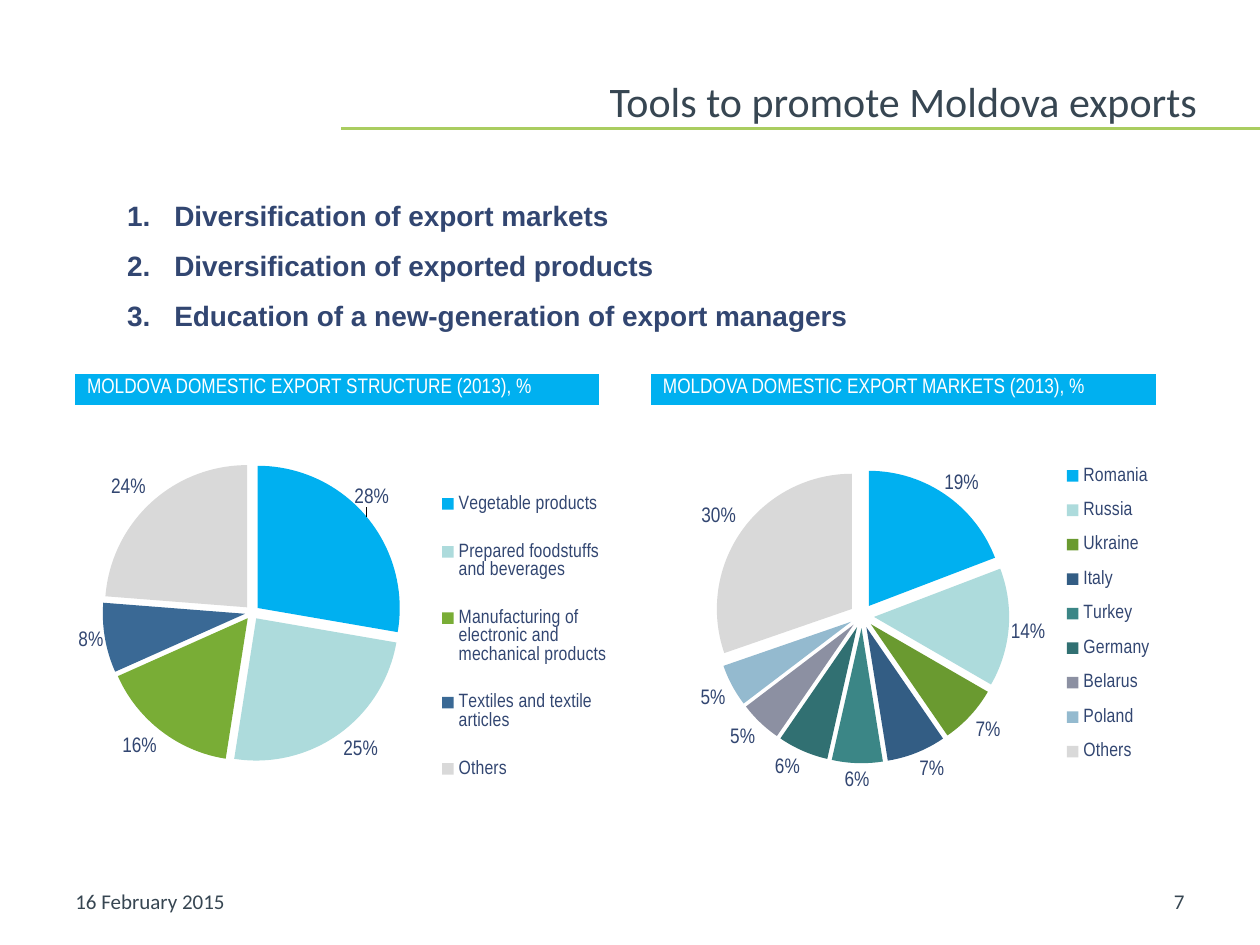
from dataclasses import dataclass

import pptx
import pptx.chart.data
import pptx.dml.color
import pptx.enum.chart
import pptx.enum.shapes
import pptx.enum.text
import pptx.oxml
import pptx.oxml.ns
import pptx.util
from lxml import etree

Cm = pptx.util.Cm
Pt = pptx.util.Pt
RGBColor = pptx.dml.color.RGBColor
Align = pptx.enum.text.PP_ALIGN
Anchor = pptx.enum.text.MSO_ANCHOR
qn = pptx.oxml.ns.qn

SLATE = RGBColor(0x37, 0x46, 0x52)
NAVY = RGBColor(0x32, 0x46, 0x71)
LIME = RGBColor(0xAA, 0xCD, 0x60)
WHITE = RGBColor(0xFF, 0xFF, 0xFF)
SKY = RGBColor(0x00, 0xB0, 0xF0)
PALE_TEAL = RGBColor(0xAD, 0xDB, 0xDC)
GREEN = RGBColor(0x79, 0xAD, 0x36)
BLUE = RGBColor(0x3A, 0x69, 0x95)
DARK_GREEN = RGBColor(0x6A, 0x9A, 0x30)
DARK_BLUE = RGBColor(0x33, 0x5D, 0x84)
TEAL = RGBColor(0x3B, 0x86, 0x86)
DARK_TEAL = RGBColor(0x31, 0x70, 0x72)
MAUVE = RGBColor(0x8C, 0x90, 0xA2)
PALE_BLUE = RGBColor(0x94, 0xBA, 0xCF)
GREY = RGBColor(0xD9, 0xD9, 0xD9)

Box = tuple[float, float, float, float]


@dataclass
class Slice:
    label: str
    share: float
    color: RGBColor
    label_shift: tuple[float, float] | None = None


@dataclass
class Panel:
    heading: str
    heading_left: float
    heading_width: float
    chart_box: Box
    plot_box: Box
    legend_box: Box
    explosion: int
    slices: list[Slice]


HEADING_TOP = 7.52
HEADING_HEIGHT = 0.66
GOALS = [
    "Diversification of export markets",
    "Diversification of exported products",
    "Education of a new-generation of export managers",
]
PANELS = [
    Panel(
        "MOLDOVA DOMESTIC EXPORT STRUCTURE (2013), %", 1.5, 10.59,
        (0.89, 8.33, 11.81, 8.74), (0.1, 0.115, 0.51, 0.69), (0.67, 0.12, 0.3, 0.79), 5,
        [
            Slice("Vegetable products", 0.28, SKY, (-0.03, -0.01)),
            Slice("Prepared foodstuffs and beverages", 0.25, PALE_TEAL),
            Slice("Manufacturing of electronic and mechanical products", 0.16, GREEN),
            Slice("Textiles and textile articles", 0.08, BLUE, (0.01, -0.02)),
            Slice("Others", 0.24, GREY),
        ],
    ),
    Panel(
        "MOLDOVA DOMESTIC EXPORT MARKETS (2013), %", 13.11, 10.21,
        (13.11, 8.33, 10.8, 9.4), (0.12, 0.1, 0.55, 0.67), (0.755, 0.08, 0.2, 0.7), 9,
        [
            Slice("Romania", 0.19, SKY, (-0.01, 0.01)),
            Slice("Russia", 0.14, PALE_TEAL, (-0.01, 0.01)),
            Slice("Ukraine", 0.07, DARK_GREEN),
            Slice("Italy", 0.07, DARK_BLUE),
            Slice("Turkey", 0.06, TEAL),
            Slice("Germany", 0.06, DARK_TEAL),
            Slice("Belarus", 0.05, MAUVE),
            Slice("Poland", 0.05, PALE_BLUE),
            Slice("Others", 0.3, GREY),
        ],
    ),
]


def style_font(font, name: str, size: float, color: RGBColor, bold: bool = False) -> None:
    font.name, font.size, font.bold = name, Pt(size), bold
    font.color.rgb = color


def move(shape, box: Box) -> None:
    shape.left, shape.top, shape.width, shape.height = map(Cm, box)


def manual_layout(**settings):
    """Build a c:layout element from its manual settings, in schema order."""
    layout = pptx.oxml.parse_xml(f"<c:layout {pptx.oxml.ns.nsdecls('c')}/>")
    manual = etree.SubElement(layout, qn("c:manualLayout"))
    for name, value in settings.items():
        etree.SubElement(manual, qn(f"c:{name}")).set("val", str(value))
    return layout


def edge_layout(box: Box, **target):
    left, top, width, height = box
    return manual_layout(**target, xMode="edge", yMode="edge", x=left, y=top, w=width, h=height)


def add_title(slide) -> None:
    title = slide.shapes.title
    move(title, (1.27, 0.53, 22.86, 2.01))
    frame = title.text_frame
    frame.text = "Tools to promote Moldova exports"
    frame.vertical_anchor = Anchor.BOTTOM
    frame.margin_left = frame.margin_top = frame.margin_right = frame.margin_bottom = 0
    paragraph = frame.paragraphs[0]
    paragraph.alignment, paragraph.line_spacing = Align.RIGHT, Pt(28)
    style_font(paragraph.runs[0].font, "Calibri", 24, SLATE)

    rule = slide.shapes.add_connector(
        pptx.enum.shapes.MSO_CONNECTOR.STRAIGHT, Cm(6.88), Cm(2.59), Cm(25.4), Cm(2.59))
    rule.line.color.rgb, rule.line.width = LIME, Pt(2)
    etree.SubElement(rule._element.spPr, qn("a:effectLst"))


def add_goals(slide) -> None:
    body = slide.placeholders[1]
    move(body, (2.31, 3.53, 18.8, 3.33))
    frame = body.text_frame
    frame.text = "\n".join(GOALS)
    frame.auto_size = pptx.enum.text.MSO_AUTO_SIZE.NONE
    for paragraph in frame.paragraphs:
        paragraph.line_spacing, paragraph.space_before = 1.5, Pt(0)
        properties = paragraph._p.get_or_add_pPr()
        properties.set("marL", str(Cm(0.95)))
        properties.set("indent", str(-Cm(0.95)))
        etree.SubElement(properties, qn("a:buFont")).set("typeface", "+mj-lt")
        etree.SubElement(properties, qn("a:buAutoNum")).set("type", "arabicPeriod")
        style_font(paragraph.runs[0].font, "Arial", 16, NAVY, bold=True)


def add_footer(slide, text: str, left: float, alignment) -> None:
    box = slide.shapes.add_textbox(Cm(left), Cm(17.65), Cm(5.92), Cm(1.02))
    frame = box.text_frame
    frame.word_wrap, frame.vertical_anchor = True, Anchor.MIDDLE
    frame.text = text
    frame.paragraphs[0].alignment = alignment
    style_font(frame.paragraphs[0].runs[0].font, "Calibri", 12, SLATE)


def add_heading(slide, panel: Panel) -> None:
    table = slide.shapes.add_table(
        1, 1, Cm(panel.heading_left), Cm(HEADING_TOP),
        Cm(panel.heading_width), Cm(HEADING_HEIGHT)).table
    table.first_row = table.horz_banding = False
    cell = table.cell(0, 0)
    cell.fill.solid()
    cell.fill.fore_color.rgb = SKY
    cell.margin_top, cell.margin_bottom = Cm(0.05), Cm(0.1)
    cell.vertical_anchor = Anchor.MIDDLE
    cell.text = panel.heading
    style_font(cell.text_frame.paragraphs[0].runs[0].font, "Arial Narrow", 12, WHITE)


def add_pie(slide, panel: Panel) -> None:
    data = pptx.chart.data.CategoryChartData(number_format="0%")
    data.categories = [piece.label for piece in panel.slices]
    data.add_series("Series 1", [piece.share for piece in panel.slices])
    chart = slide.shapes.add_chart(
        pptx.enum.chart.XL_CHART_TYPE.PIE, *map(Cm, panel.chart_box), data).chart
    style_font(chart.font, "Calibri", 18, NAVY)
    chart.has_title = False

    plot_area = chart._chartSpace.chart.plotArea
    for layout in plot_area.findall(qn("c:layout")):
        plot_area.remove(layout)
    plot_area.insert(0, edge_layout(panel.plot_box, layoutTarget="inner"))

    chart.has_legend = True
    chart.legend.position = pptx.enum.chart.XL_LEGEND_POSITION.RIGHT
    chart.legend.include_in_layout = False
    style_font(chart.legend.font, "Arial Narrow", 11, NAVY)
    chart.legend._element.find(qn("c:legendPos")).addnext(edge_layout(panel.legend_box))

    plot = chart.plots[0]
    plot.vary_by_categories = True
    series = plot.series[0]
    explosion = etree.Element(qn("c:explosion"), val=str(panel.explosion))
    series._element.find(qn("c:tx")).addnext(explosion)

    outside = pptx.enum.chart.XL_LABEL_POSITION.OUTSIDE_END
    labels = series.data_labels
    labels.show_value, labels.position = True, outside
    labels.number_format, labels.number_format_is_linked = "0%", False
    style_font(labels.font, "Arial Narrow", 12, NAVY)
    for index, piece in enumerate(panel.slices):
        point = series.points[index]
        point.format.fill.solid()
        point.format.fill.fore_color.rgb = piece.color
        if piece.label_shift:
            label = point.data_label
            style_font(label.font, "Arial Narrow", 12, NAVY)
            label.position = outside
            shift_x, shift_y = piece.label_shift
            element = labels._element.find(f"{qn('c:dLbl')}[{qn('c:idx')}][last()]")
            element.find(qn("c:idx")).addnext(manual_layout(x=shift_x, y=shift_y))


def main() -> None:
    presentation = pptx.Presentation()
    presentation.slide_width, presentation.slide_height = Cm(25.4), Cm(19.05)
    slide = presentation.slides.add_slide(presentation.slide_layouts[1])
    add_title(slide)
    add_goals(slide)
    add_footer(slide, "16 February 2015", 1.27, Align.LEFT)
    add_footer(slide, "7", 18.21, Align.RIGHT)
    for panel in PANELS:
        add_heading(slide, panel)
        add_pie(slide, panel)
    presentation.save("out.pptx")


if __name__ == "__main__":
    main()
